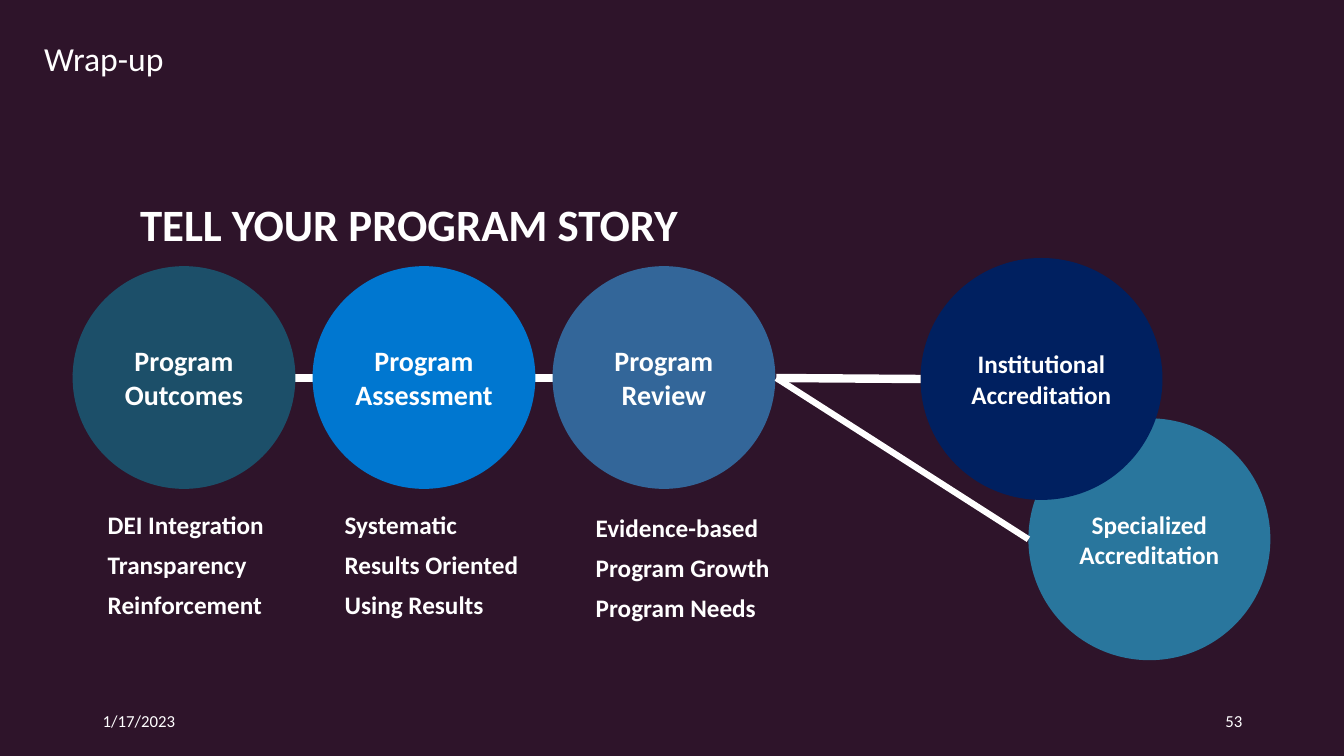
from lxml import etree
from pptx import Presentation
from pptx import util as u
from pptx.dml.color import RGBColor
from pptx.enum import shapes, text
from pptx.oxml import ns

PLUM = RGBColor(0x2E, 0x14, 0x2A)
WHITE = RGBColor(0xFF, 0xFF, 0xFF)
PETROL = RGBColor(0x1C, 0x4F, 0x69)
AZURE = RGBColor(0x00, 0x77, 0xD0)
STEEL = RGBColor(0x33, 0x66, 0x99)
NAVY = RGBColor(0x00, 0x20, 0x60)
TEAL = RGBColor(0x29, 0x76, 0x9D)
EMU_PER_PX = 9144


def px(length):
    return u.Emu(length * EMU_PER_PX)


class StorySlide:
    font_name = "Calibri"

    def __init__(self, deck):
        self.slide = deck.slides.add_slide(deck.slide_layouts[6])
        self.slide.background.fill.solid()
        self.slide.background.fill.fore_color.rgb = PLUM

    def set_words(self, frame, words, size, bold, align, anchor):
        frame.word_wrap = True
        frame.vertical_anchor = anchor
        paragraph = frame.paragraphs[0]
        paragraph.text = words
        paragraph.alignment = align
        paragraph.font.name = self.font_name
        paragraph.font.size = u.Pt(size)
        paragraph.font.bold = bold
        paragraph.font.color.rgb = WHITE

    def label(self, words, left, top, width, height, size, bold=False,
              align=text.PP_ALIGN.LEFT, anchor=text.MSO_ANCHOR.TOP):
        box = self.slide.shapes.add_textbox(px(left), px(top), px(width), px(height))
        self.set_words(box.text_frame, words, size, bold, align, anchor)

    def circle(self, words, left, top, diameter, color, size):
        disc = self.slide.shapes.add_shape(
            shapes.MSO_SHAPE.FLOWCHART_CONNECTOR,
            px(left), px(top), px(diameter), px(diameter))
        disc.shadow.inherit = False
        disc.fill.solid()
        disc.fill.fore_color.rgb = color
        disc.line.fill.background()
        frame = disc.text_frame
        frame.margin_left = frame.margin_right = px(5)
        self.set_words(frame, words, size, True,
                       text.PP_ALIGN.CENTER, text.MSO_ANCHOR.MIDDLE)

    def link(self, x1, y1, x2, y2, weight):
        connector = self.slide.shapes.add_connector(
            shapes.MSO_CONNECTOR.STRAIGHT, px(x1), px(y1), px(x2), px(y2))
        connector.line.color.rgb = WHITE
        connector.line.width = u.Pt(weight)
        etree.SubElement(connector._element.spPr, ns.qn("a:effectLst"))


def main():
    deck = Presentation()
    deck.slide_width, deck.slide_height = px(1333), px(750)
    story = StorySlide(deck)

    story.label("Wrap-up", 34, 33, 640, 50, 24)
    story.label("TELL YOUR PROGRAM STORY", 129, 190, 768, 64, 32, bold=True)

    qualities = [
        (97, 500, 180, ["DEI Integration", "Transparency", "Reinforcement"]),
        (332, 500, 249, ["Systematic", "Results Oriented", "Using Results"]),
        (581, 503, 208, ["Evidence-based", "Program Growth", "Program Needs"]),
    ]
    for left, top, width, items in qualities:
        for row, item in enumerate(items):
            story.label(item, left, top + row * 40, width, 40, 18, bold=True)

    story.circle("Specialized Accreditation", 1020, 415, 240, TEAL, 18)
    story.circle("Institutional Accreditation", 913, 256, 240, NAVY, 18)

    story.link(72, 375, 767, 375, 6)
    stages = [("Program Outcomes", PETROL), ("Program Assessment", AZURE),
              ("Program Review", STEEL)]
    for step, (stage, color) in enumerate(stages):
        story.circle(stage, 72 + step * 238, 264, 221, color, 20)
    story.link(770, 375, 913, 376, 6)
    story.link(770, 375, 1020, 535, 4.5)

    middle = text.MSO_ANCHOR.MIDDLE
    story.label("1/17/2023", 92, 695, 300, 40, 12, anchor=middle)
    story.label("53", 942, 695, 300, 40, 12, align=text.PP_ALIGN.RIGHT, anchor=middle)

    deck.save("out.pptx")


if __name__ == "__main__":
    main()
